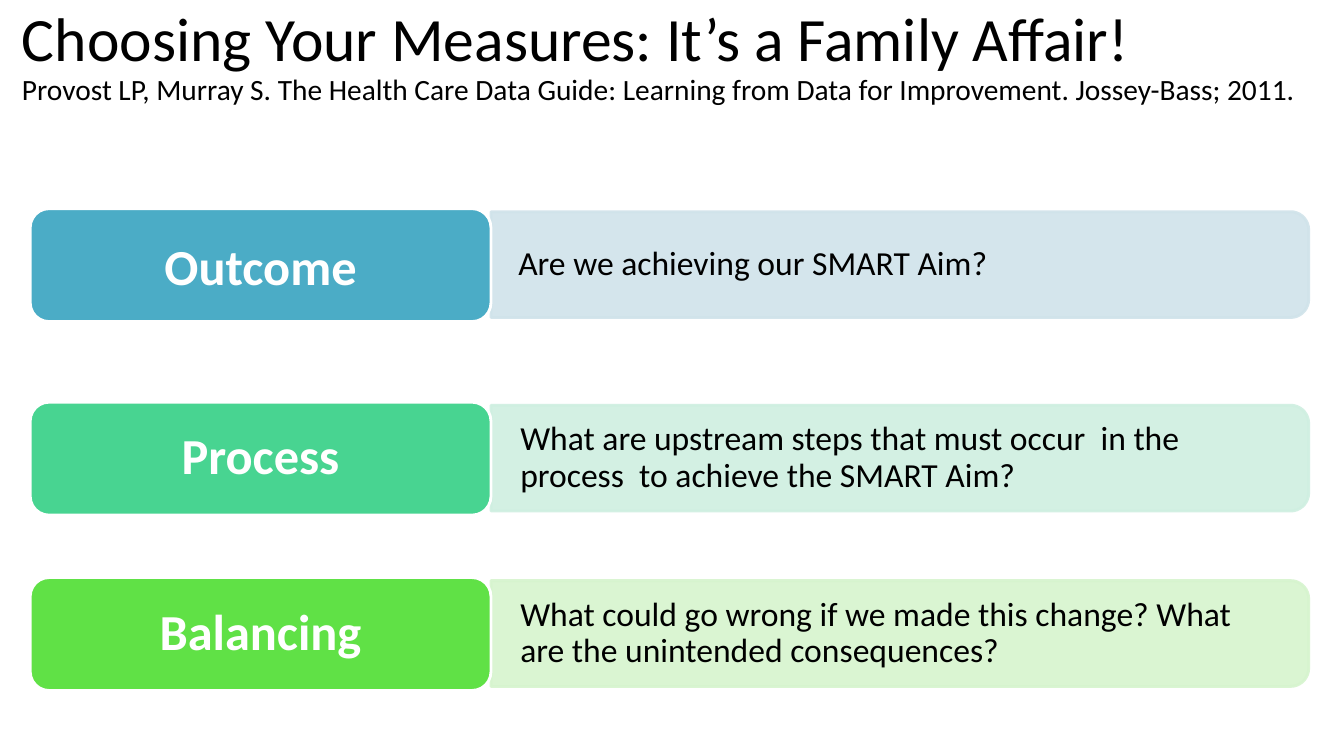
from dataclasses import dataclass
from math import cos, radians, sin

from lxml import etree
from pptx import Presentation
from pptx.dml.color import RGBColor
from pptx.enum.shapes import MSO_SHAPE
from pptx.enum.text import MSO_ANCHOR, PP_ALIGN
from pptx.oxml.ns import qn
from pptx.util import Emu, Pt

ROUND = MSO_SHAPE.ROUNDED_RECTANGLE
MIDDLE, BOTTOM = MSO_ANCHOR.MIDDLE, MSO_ANCHOR.BOTTOM
LEFT, CENTER = PP_ALIGN.LEFT, PP_ALIGN.CENTER
FONT, BLACK, WHITE = "Calibri", "000000", "FFFFFF"
TAB_X, TAB_W, TAB_H = 30, 457, 112
PANEL_X, PANEL_W, PANEL_H = 487, 811, 105
PANEL_DROP, CURVE = 3, 18


@dataclass
class Measure:
    """One kind of measure, with its question and colours."""
    name: str
    ask: str
    top: int
    tab: str
    panel: str
    indent: int = 2
    space: float = 0.9


MEASURES = [
    Measure("Outcome", "Are we achieving our SMART Aim?",
            207, "4BACC6", "D0E3EA", 0, 1.0),
    Measure("Process", "What are upstream steps that must occur  in the process  to achieve the SMART Aim?",
            399, "48D491", "CFEFE1"),
    Measure("Balancing", "What could go wrong if we made this change? What are the unintended consequences?",
            573, "60E146", "D6F4CE"),
]
TITLE = "Choosing Your Measures: It’s a Family Affair!"
SOURCE = ("Provost LP, Murray S. The Health Care Data Guide: "
          "Learning from Data for Improvement. Jossey-Bass; 2011.")


def px(length: float) -> Emu:
    """Turn px, a hundred to the inch, into EMU."""
    return Emu(round(length * 9144))


def color(code: str) -> RGBColor:
    """Turn a hex string into a colour."""
    return RGBColor.from_string(code)


def style(para, size: int, code: str, bold: bool = False, align=LEFT, space: float = 0.9) -> None:
    """Format a paragraph and its runs."""
    para.alignment = align
    para.line_spacing = space
    for run in para.runs:
        run.font.name = FONT
        run.font.size = Pt(size)
        run.font.bold = bold
        run.font.color.rgb = color(code)


def paint(shape, fill: str, line: str) -> None:
    """Give a shape a plain fill and outline."""
    shape.shadow.inherit = False
    shape.fill.solid()
    shape.fill.fore_color.rgb = color(fill)
    shape.line.color.rgb = color(line)
    shape.line.width = Pt(2)


def write(shape, text: str, sides: tuple[int, int, int, int]):
    """Put text in a shape with insets and return its paragraph."""
    frame = shape.text_frame
    frame.word_wrap = True
    frame.vertical_anchor = MIDDLE
    (frame.margin_left, frame.margin_top,
     frame.margin_right, frame.margin_bottom) = map(px, sides)
    frame.text = text
    return frame.paragraphs[0]


def add_panel(slide, item: Measure) -> None:
    """Draw the question panel, rounded on its right side."""
    top = item.top + PANEL_DROP
    right, base = PANEL_X + PANEL_W, top + PANEL_H
    points = []
    for mid, start in ((top + CURVE, -90), (base - CURVE, 0)):
        for turn in range(start, start + 91, 10):
            points.append((px(right - CURVE + CURVE * cos(radians(turn))),
                           px(mid + CURVE * sin(radians(turn)))))
    points.append((px(PANEL_X), px(base)))
    pen = slide.shapes.build_freeform(px(PANEL_X), px(top))
    pen.add_line_segments(points, close=True)
    panel = pen.convert_to_shape()
    paint(panel, item.panel, item.panel)
    for node in panel._element.spPr.iter(qn("a:srgbClr")):
        etree.SubElement(node, qn("a:alpha")).set("val", "90000")
    para = write(panel, item.ask, (27, 19, 32, 19))
    para._p.get_or_add_pPr().set("marL", str(px(item.indent)))
    style(para, 24, BLACK)


def add_tab(slide, item: Measure) -> None:
    """Draw the coloured tab that names a measure."""
    tab = slide.shapes.add_shape(ROUND, px(TAB_X), px(item.top), px(TAB_W), px(TAB_H))
    paint(tab, item.tab, WHITE)
    para = write(tab, item.name, (20, 13, 20, 13))
    style(para, 36, WHITE, True, CENTER, item.space)


def add_title(slide) -> None:
    """Write the heading and its source."""
    frame = slide.shapes.add_textbox(px(12), px(0), px(1310), px(111)).text_frame
    frame.word_wrap = True
    frame.vertical_anchor = BOTTOM
    frame.text = TITLE
    style(frame.paragraphs[0], 44, BLACK)
    para = frame.add_paragraph()
    para.text = SOURCE
    para.space_after = Pt(6)
    style(para, 21, BLACK)


def main() -> None:
    """Build and save the slide."""
    deck = Presentation()
    deck.slide_width, deck.slide_height = px(1333), px(750)
    slide = deck.slides.add_slide(deck.slide_layouts[6])
    add_title(slide)
    for item in MEASURES:
        add_panel(slide, item)
        add_tab(slide, item)
    deck.save("out.pptx")


if __name__ == "__main__":
    main()
